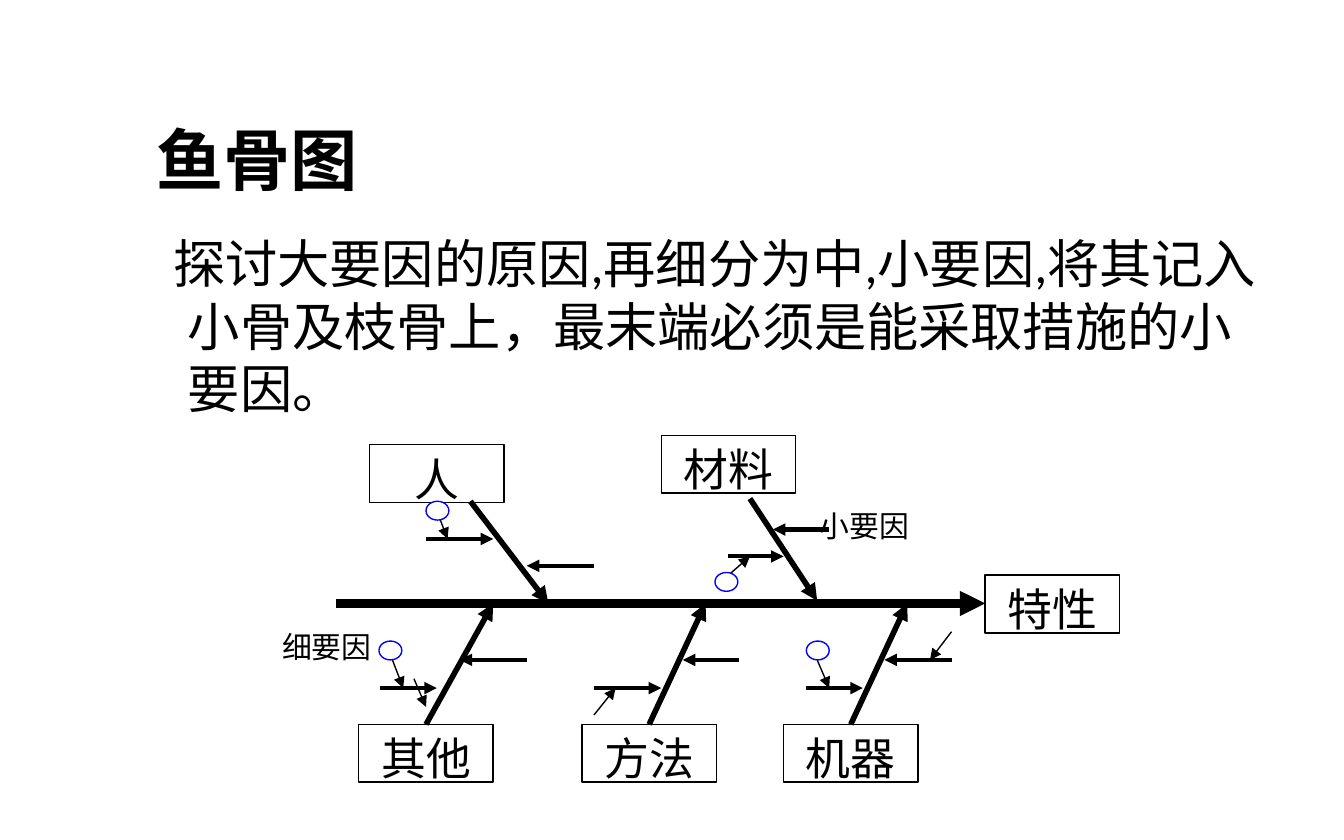
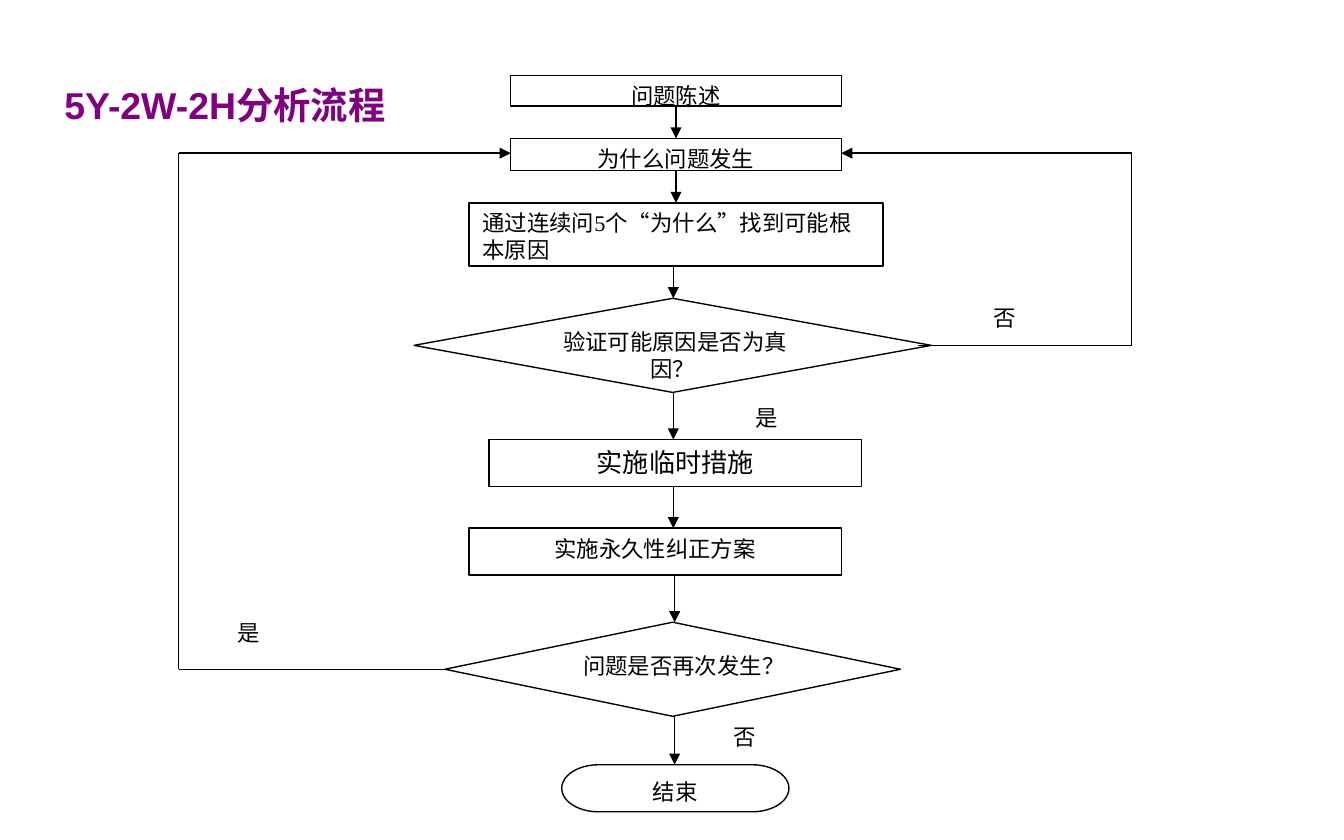
"""Builds a fishbone diagram slide and a 5Y-2W-2H analysis flow slide."""
from itertools import pairwise

from lxml import etree
from pptx import Presentation
from pptx.dml.color import RGBColor
from pptx.enum.shapes import MSO_CONNECTOR, MSO_SHAPE
from pptx.enum.text import MSO_ANCHOR, PP_ALIGN
from pptx.oxml.ns import qn
from pptx.util import Pt

RECT, ELLIPSE = MSO_SHAPE.RECTANGLE, MSO_SHAPE.OVAL
DECISION, TERMINATOR = MSO_SHAPE.FLOWCHART_DECISION, MSO_SHAPE.FLOWCHART_TERMINATOR
STRAIGHT = MSO_CONNECTOR.STRAIGHT
LEFT, CENTER = PP_ALIGN.LEFT, PP_ALIGN.CENTER
TOP, MIDDLE, BOTTOM = MSO_ANCHOR.TOP, MSO_ANCHOR.MIDDLE, MSO_ANCHOR.BOTTOM

PX = 9144
SLIDE_W, SLIDE_H = 1000, 625
COLORS = {"ink": "000000", "paper": "FFFFFF", "title": "800080", "cause": "0000FF"}
THIN, TWIG_WEIGHT, RIB_WEIGHT, SPINE_WEIGHT = 0.75, 2.25, 3, 4.5

FISH_TITLE = "鱼骨图"
FISH_INTRO = "探讨大要因的原因,再细分为中,小要因,将其记入小骨及枝骨上，最末端必须是能采取措施的小要因。"
CATEGORY_W, CATEGORY_H = 100, 43
CATEGORIES = [
    ("特性", 733, 428), ("机器", 583, 539), ("方法", 433, 539),
    ("其他", 267, 539), ("人", 275, 331), ("材料", 492, 324),
]
SPINE = (250, 449, 733, 449)
RIBS = [
    (350, 373, 408, 449), (558, 371, 608, 447), (317, 539, 367, 449),
    (483, 539, 525, 449), (633, 539, 675, 449),
]
TWIGS = [
    (317, 367, 401), (617, 575, 394), (442, 392, 421), (542, 583, 414),
    (283, 325, 512), (392, 342, 491), (442, 492, 512), (550, 508, 491),
    (600, 642, 512), (708, 658, 491),
]
POINTERS = [
    (325, 380, 333, 401), (542, 428, 558, 414), (292, 491, 300, 512),
    (442, 532, 458, 512), (708, 470, 692, 491), (308, 505, 317, 526),
    (608, 491, 617, 512),
]
CAUSE_W, CAUSE_H = 17, 14
CAUSES = [(532, 426), (317, 373), (282, 477), (600, 477)]
CAUSE_LABELS = [("小要因", 600, 373), ("细要因", 200, 463)]

FLOW_TITLE = "5Y-2W-2H分析流程"
STEPS = [
    ("问题陈述", RECT, (380, 56, 246, 23), 12, CENTER),
    ("为什么问题发生", RECT, (380, 103, 246, 24), 12, CENTER),
    ("通过连续问5个“为什么”找到可能根本原因", RECT, (349, 151, 308, 47), 12, LEFT),
    (" 验证可能原因是否为真因？", DECISION, (308, 222, 385, 70), 12, CENTER),
    ("实施临时措施", RECT, (364, 327, 277, 35), 14, CENTER),
    ("实施永久性纠正方案", RECT, (349, 393, 277, 35), 12, CENTER),
    ("问题是否再次发生？", DECISION, (331, 463, 339, 70), 12, CENTER),
    ("结束", TERMINATOR, (418, 569, 169, 35), 12, CENTER),
]
DROP_X = [503, 503, 501, 501, 501, 502, 502]
LOOPS = [
    [(683, 257), (842, 257), (842, 114), (626, 114)],
    [(334, 498), (133, 498), (133, 114), (380, 114)],
]
ANSWERS = [
    ("是", (534, 291, 123, 35)), ("否", (525, 528, 77, 35)),
    ("是", (149, 451, 123, 35)), ("否", (718, 216, 77, 35)),
]


def rgb(name):
    return RGBColor.from_string(COLORS[name])


def emu(lengths):
    return [length * PX for length in lengths]


def write(shape, text, size, font, align=CENTER, anchor=TOP, color="ink", bold=False):
    frame = shape.text_frame
    frame.word_wrap = True
    frame.vertical_anchor = anchor
    frame.text = text
    paragraph = frame.paragraphs[0]
    paragraph.alignment = align
    for run in paragraph.runs:
        run.font.size = Pt(size)
        run.font.name = font
        run.font.bold = bold
        run.font.color.rgb = rgb(color)
    return paragraph


def add_text(slide, box, *args, **style):
    return write(slide.shapes.add_textbox(*emu(box)), *args, **style)


def add_outline(slide, preset, box, line="ink", fill=None):
    shape = slide.shapes.add_shape(preset, *emu(box))
    shape.shadow.inherit = False
    if fill:
        shape.fill.solid()
        shape.fill.fore_color.rgb = rgb(fill)
    else:
        shape.fill.background()
    if line:
        shape.line.color.rgb = rgb(line)
        shape.line.width = Pt(THIN)
    else:
        shape.line.fill.background()
    return shape


def add_line(slide, ends, weight=THIN, arrow=True):
    connector = slide.shapes.add_connector(STRAIGHT, *emu(ends))
    connector.line.color.rgb = rgb("ink")
    connector.line.width = Pt(weight)
    properties = connector._element.spPr
    if arrow:
        etree.SubElement(properties.find(qn("a:ln")), qn("a:tailEnd"), type="triangle")
    etree.SubElement(properties, qn("a:effectLst"))


def build_fishbone(slide):
    intro = add_text(slide, (92, 167, 858, 132), FISH_INTRO, 28, "Calibri", LEFT)
    intro._p.get_or_add_pPr().set("marL", str(38 * PX))
    intro._p.get_or_add_pPr().set("indent", str(-11 * PX))
    add_text(slide, (75, 118, 233, 35), FISH_TITLE, 36, "Calibri", anchor=BOTTOM, bold=True)
    for category, x, y in CATEGORIES:
        box = add_outline(slide, RECT, (x, y, CATEGORY_W, CATEGORY_H))
        write(box, category, 24, "Karla")
    add_line(slide, SPINE, SPINE_WEIGHT)
    for rib in RIBS:
        add_line(slide, rib, RIB_WEIGHT)
    for start, end, y in TWIGS:
        add_line(slide, (start, y, end, y), TWIG_WEIGHT)
    for pointer in POINTERS:
        add_line(slide, pointer)
    for x, y in CAUSES:
        add_outline(slide, ELLIPSE, (x, y, CAUSE_W, CAUSE_H), "cause", "paper")
    for label, x, y in CAUSE_LABELS:
        add_text(slide, (x, y, 108, 31), label, 16, "Karla", LEFT)


def build_flow(slide):
    add_text(slide, (0, 53, 335, 49), FLOW_TITLE, 20, "Arial",
             anchor=MIDDLE, color="title", bold=True)
    for step, preset, box, size, align in STEPS:
        write(add_outline(slide, preset, box), step, size, "Times New Roman", align)
    boxes = [box for _, _, box, _, _ in STEPS]
    for x, (above, below) in zip(DROP_X, pairwise(boxes)):
        add_line(slide, (x, above[1] + above[3], x, below[1]))
    for corners in LOOPS:
        for start, end in pairwise(corners):
            add_line(slide, start + end, arrow=end == corners[-1])
    for answer, box in ANSWERS:
        write(add_outline(slide, ELLIPSE, box, line=None), answer, 12, "Times New Roman", LEFT)


def main():
    deck = Presentation()
    deck.slide_width, deck.slide_height = emu((SLIDE_W, SLIDE_H))
    blank = deck.slide_layouts[6]
    for build in (build_fishbone, build_flow):
        build(deck.slides.add_slide(blank))
    deck.save("out.pptx")


if __name__ == "__main__":
    main()
